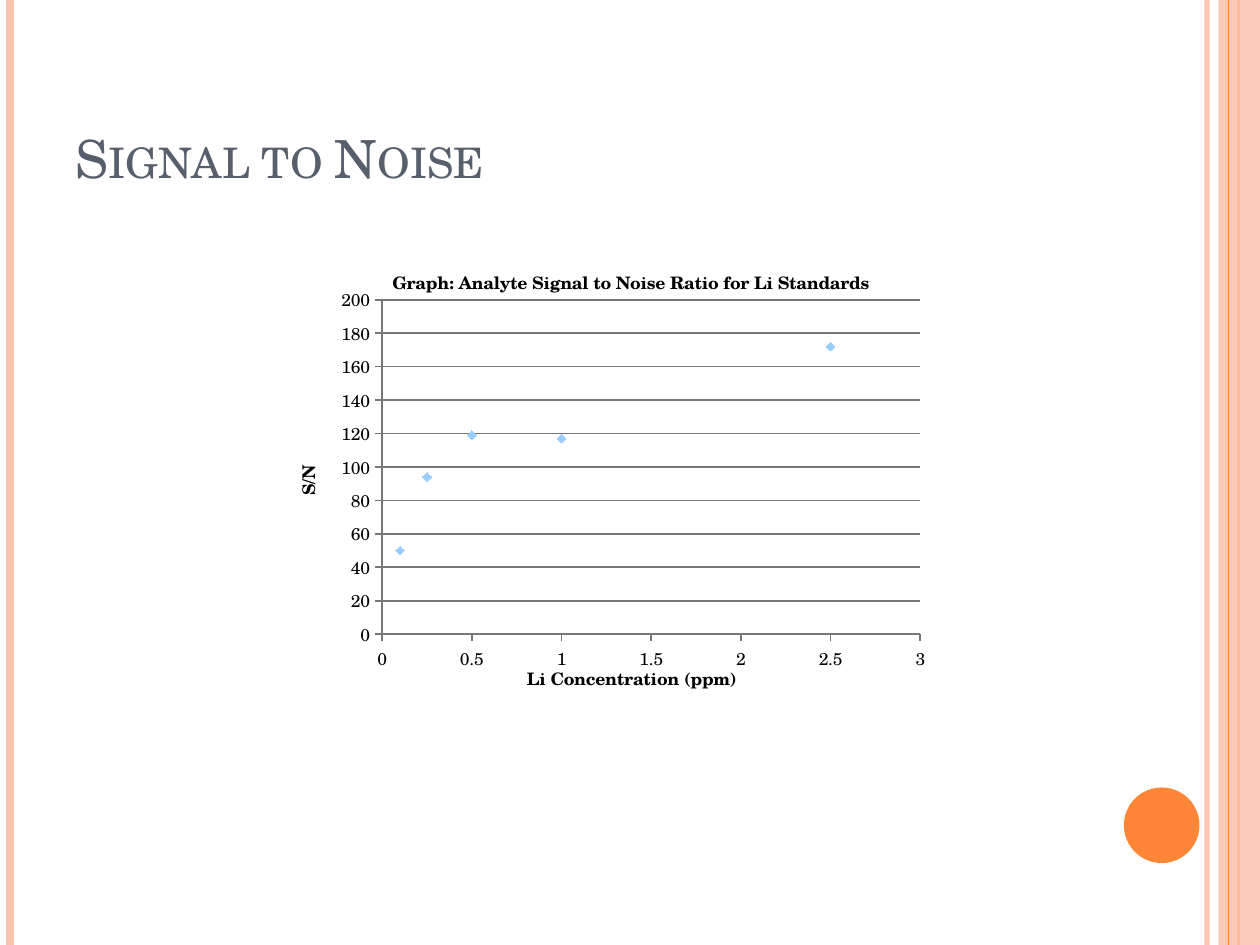
from lxml import etree
from pptx import Presentation
from pptx.chart.data import XyChartData
from pptx.dml.color import RGBColor
from pptx.enum.chart import XL_CHART_TYPE as CHART, XL_MARKER_STYLE as MARKER, XL_TICK_MARK as TICK
from pptx.enum.shapes import MSO_CONNECTOR as CONN, MSO_SHAPE as SHAPE
from pptx.enum.text import MSO_ANCHOR as ANCHOR, PP_ALIGN as ALIGN
from pptx.oxml.ns import qn
from pptx.util import Pt

PX = 9144  # 100 px to the inch
WIDTH, HEIGHT = 1000, 750
FONT = "TeX Gyre Schola"
ORANGE, PEACH, SLATE = "FE8637", "FEC3AE", "575F6D"
BLACK, WHITE, GRAY, SKY = "000000", "FFFFFF", "777777", "99CCFF"
POINTS = [(0.1, 50), (0.25, 94), (0.5, 119), (1, 117), (2.5, 172)]


def rgb(color):
    return RGBColor.from_string(color)


def set_alpha(fill_owner, percent):
    color = next(fill_owner.iter(qn("a:srgbClr")))
    etree.SubElement(color, qn("a:alpha")).set("val", str(percent * 1000))


def set_layout(parent, index, **values):
    """Place a chart part by fractions of the chart area."""
    for old in parent.findall(qn("c:layout")):
        parent.remove(old)
    layout = etree.Element(qn("c:layout"))
    manual = etree.SubElement(layout, qn("c:manualLayout"))
    for key, value in values.items():
        etree.SubElement(manual, qn("c:" + key)).set("val", str(value))
    parent.insert(index, layout)


class SlideBuilder:
    def __init__(self, slide, font):
        self.slide, self.font = slide, font

    def style(self, font, size, color, bold=False):
        font.name, font.size, font.bold = self.font, Pt(size), bold
        font.color.rgb = rgb(color)

    def stripe(self, x, color, width, alpha=100):
        line = self.slide.shapes.add_connector(
            CONN.STRAIGHT, x * PX, 0, x * PX, HEIGHT * PX)
        line.line.color.rgb = rgb(color)
        line.line.width = Pt(width)
        sp_pr = line._element.spPr
        if alpha < 100:
            set_alpha(sp_pr, alpha)
        etree.SubElement(sp_pr, qn("a:effectLst"))

    def shape(self, kind, x, y, w, h, color, alpha=100):
        sp = self.slide.shapes.add_shape(kind, x * PX, y * PX, w * PX, h * PX)
        sp.shadow.inherit = False
        sp.fill.solid()
        sp.fill.fore_color.rgb = rgb(color)
        sp.line.fill.background()
        if alpha < 100:
            set_alpha(sp._element.spPr, alpha)

    def title(self, text, x, y, w, h, size, color):
        sp = self.slide.shapes.title
        sp.left, sp.top, sp.width, sp.height = x * PX, y * PX, w * PX, h * PX
        tf = sp.text_frame
        tf.text = text
        tf.word_wrap, tf.vertical_anchor = True, ANCHOR.BOTTOM
        p = tf.paragraphs[0]
        p.alignment = ALIGN.LEFT
        r = p.runs[0]
        self.style(r.font, size, color)
        r.font._element.set("cap", "small")

    def chart_title(self, title, text, x, y, rotation=0):
        tf = title.text_frame
        tf.text = text
        tf._txBody.bodyPr.set("rot", str(rotation * 60000))
        self.style(tf.paragraphs[0].runs[0].font, 10, BLACK, bold=True)
        set_layout(title._element, 1, xMode="edge", yMode="edge", x=x, y=y)

    def axis(self, axis, top, step):
        axis.minimum_scale, axis.maximum_scale, axis.major_unit = 0, top, step
        axis.major_tick_mark, axis.minor_tick_mark = TICK.OUTSIDE, TICK.NONE
        axis.has_major_gridlines = False
        axis.format.line.color.rgb = rgb(GRAY)
        axis.format.line.width = Pt(1)
        self.style(axis.tick_labels.font, 10, BLACK)

    def scatter(self, points, x, y, w, h):
        data = XyChartData()
        series = data.add_series("Series 1")
        for point in points:
            series.add_data_point(*point)
        chart = self.slide.shapes.add_chart(
            CHART.XY_SCATTER, x * PX, y * PX, w * PX, h * PX, data).chart
        chart.has_legend = False
        self.style(chart.font, 10, BLACK)
        plot = chart.plots[0]
        plot.vary_by_categories = False
        dots = plot.series[0]
        dots.smooth = False
        dots.format.line.fill.background()
        dots.marker.style, dots.marker.size = MARKER.DIAMOND, 5
        dots.marker.format.fill.solid()
        dots.marker.format.fill.fore_color.rgb = rgb(SKY)
        dots.marker.format.line.color.rgb = rgb(SKY)
        return chart


def main():
    prs = Presentation()
    prs.slide_width, prs.slide_height = WIDTH * PX, HEIGHT * PX
    s = prs.slides.add_slide(prs.slide_layouts[5])
    s.background.fill.solid()
    s.background.fill.fore_color.rgb = rgb(WHITE)
    page = SlideBuilder(s, FONT)

    # Edge decoration
    page.stripe(958, PEACH, 3, alpha=93)
    page.stripe(8, PEACH, 4.5)
    page.stripe(983, ORANGE, 1.5)
    page.shape(SHAPE.RECTANGLE, 967, 0, 33, HEIGHT, PEACH, alpha=87)
    page.stripe(975, ORANGE, 0.75)
    page.shape(SHAPE.OVAL, 892, 625, 60, 60, ORANGE)

    page.title("Signal to Noise", 50, 30, 817, 125, 30, SLATE)

    # Signal-to-noise chart
    chart = page.scatter(POINTS, 219, 196, 562, 357)
    x_axis, y_axis = chart.category_axis, chart.value_axis
    page.axis(x_axis, 3, 0.5)
    page.axis(y_axis, 200, 20)
    y_axis.has_major_gridlines = True
    grid = y_axis.major_gridlines.format.line
    grid.color.rgb, grid.width = rgb(GRAY), Pt(1)
    chart.has_title = True
    page.chart_title(chart.chart_title,
                     "Graph: Analyte Signal to Noise Ratio for Li Standards", 0.16, 0.04)
    chart.chart_title.include_in_layout = True
    page.chart_title(x_axis.axis_title, "Li Concentration (ppm)", 0.35, 0.94)
    page.chart_title(y_axis.axis_title, "S/N", 0.02, 0.49, rotation=-90)
    plot_area = next(chart._chartSpace.iter(qn("c:plotArea")))
    set_layout(plot_area, 0, layoutTarget="inner", xMode="edge", yMode="edge",
               x=0.15, y=0.12, w=0.76, h=0.76)

    prs.save("out.pptx")


if __name__ == "__main__":
    main()
